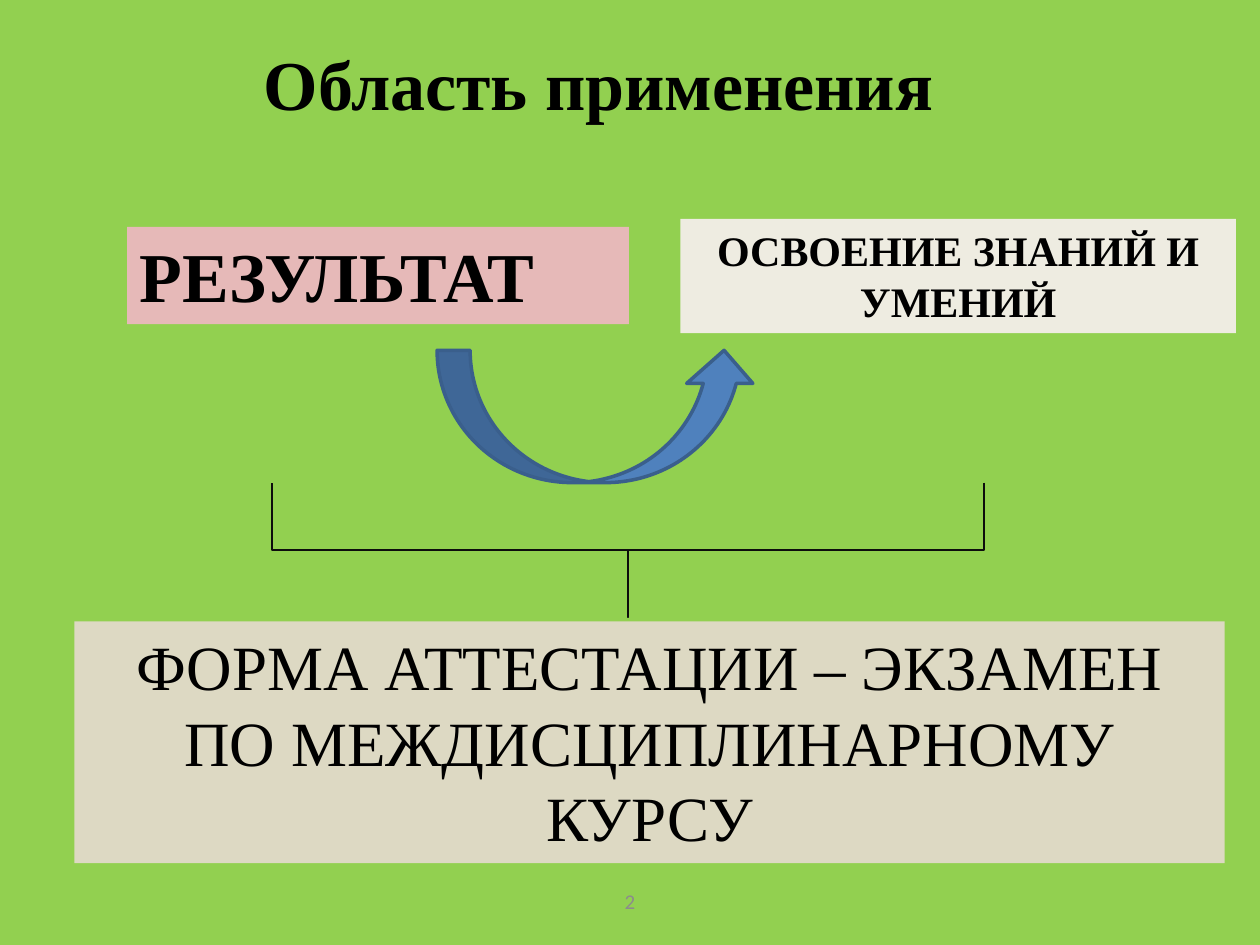
from dataclasses import dataclass

from pptx import Presentation
from pptx import util as u
from pptx.dml.color import RGBColor
from pptx.enum import shapes, text

SERIF = "Times New Roman"


@dataclass
class Label:
    """Wording, position in points and type style of one text frame."""
    wording: str
    box: tuple[float, float, float, float]
    size: float
    bold: bool = False
    fill: str | None = None
    font: str = SERIF
    color: str = "000000"
    align: text.PP_ALIGN = text.PP_ALIGN.CENTER
    anchor: text.MSO_ANCHOR = text.MSO_ANCHOR.TOP


TITLE = Label("Область применения", (110.9, 19.4, 462.2, 55.4), 40, True)
PANELS = [
    Label("РЕЗУЛЬТАТ", (72.7, 129.6, 286.6, 55.7), 40, True, "E6B9B8",
          align=text.PP_ALIGN.LEFT),
    Label("ОСВОЕНИЕ ЗНАНИЙ И УМЕНИЙ", (388.8, 125, 317.5, 65.4), 24, True,
          "EEECE1"),
    Label("ФОРМА АТТЕСТАЦИИ – ЭКЗАМЕН ПО МЕЖДИСЦИПЛИНАРНОМУ КУРСУ",
          (42.5, 355, 657.4, 138.2), 36, False, "DDD9C3"),
]
PAGE_NUMBER = Label("2", (246, 500.5, 228, 28.8), 12, font="Calibri",
                    color="8C8C8C", anchor=text.MSO_ANCHOR.MIDDLE)


def rgb(value: str) -> RGBColor:
    return RGBColor.from_string(value)


def points(box: tuple[float, ...]) -> list[u.Pt]:
    return [u.Pt(length) for length in box]


def write(shape, label: Label) -> None:
    frame = shape.text_frame
    frame.word_wrap = True
    frame.auto_size = text.MSO_AUTO_SIZE.NONE
    frame.vertical_anchor = label.anchor
    paragraph = frame.paragraphs[0]
    paragraph.alignment = label.align
    run = paragraph.add_run()
    run.text = label.wording
    run.font.name = label.font
    run.font.size = u.Pt(label.size)
    run.font.bold = label.bold
    run.font.color.rgb = rgb(label.color)


def add_shape(slide, kind: shapes.MSO_SHAPE, box: tuple[float, ...],
              fill: str | None = None, line: str | None = None,
              weight: float = 0):
    shape = slide.shapes.add_shape(kind, *points(box))
    shape.shadow.inherit = False
    if fill:
        shape.fill.solid()
        shape.fill.fore_color.rgb = rgb(fill)
    else:
        shape.fill.background()
    if line:
        shape.line.color.rgb = rgb(line)
        shape.line.width = u.Pt(weight)
    else:
        shape.line.fill.background()
    return shape


def add_title(slide, label: Label) -> None:
    title = slide.shapes.title
    title.left, title.top, title.width, title.height = points(label.box)
    write(title, label)


def add_panel(slide, label: Label) -> None:
    write(add_shape(slide, shapes.MSO_SHAPE.RECTANGLE, label.box, label.fill),
          label)


def add_curved_arrow(slide) -> None:
    arrow = add_shape(slide, shapes.MSO_SHAPE.CURVED_DOWN_ARROW,
                      (249.8, 200.2, 182.9, 75.6), "4F81BD", "3A5F8C", 2)
    arrow._element.spPr.xfrm.set("flipV", "1")


def add_brace(slide) -> None:
    brace = add_shape(slide, shapes.MSO_SHAPE.RIGHT_BRACE,
                      (320.4, 110.9, 77, 406.8), line="0D0D0D", weight=0.75)
    brace.adjustments[0] = 0
    brace.adjustments[1] = 0.5
    brace.rotation = 90


def main() -> None:
    presentation = Presentation()
    presentation.slide_width = u.Pt(720)
    presentation.slide_height = u.Pt(540)
    slide = presentation.slides.add_slide(
        presentation.slide_layouts.get_by_name("Title Only"))
    slide.background.fill.solid()
    slide.background.fill.fore_color.rgb = rgb("92D050")

    add_title(slide, TITLE)
    add_curved_arrow(slide)
    for panel in PANELS:
        add_panel(slide, panel)
    add_brace(slide)
    write(slide.shapes.add_textbox(*points(PAGE_NUMBER.box)), PAGE_NUMBER)
    presentation.save("out.pptx")


if __name__ == "__main__":
    main()
